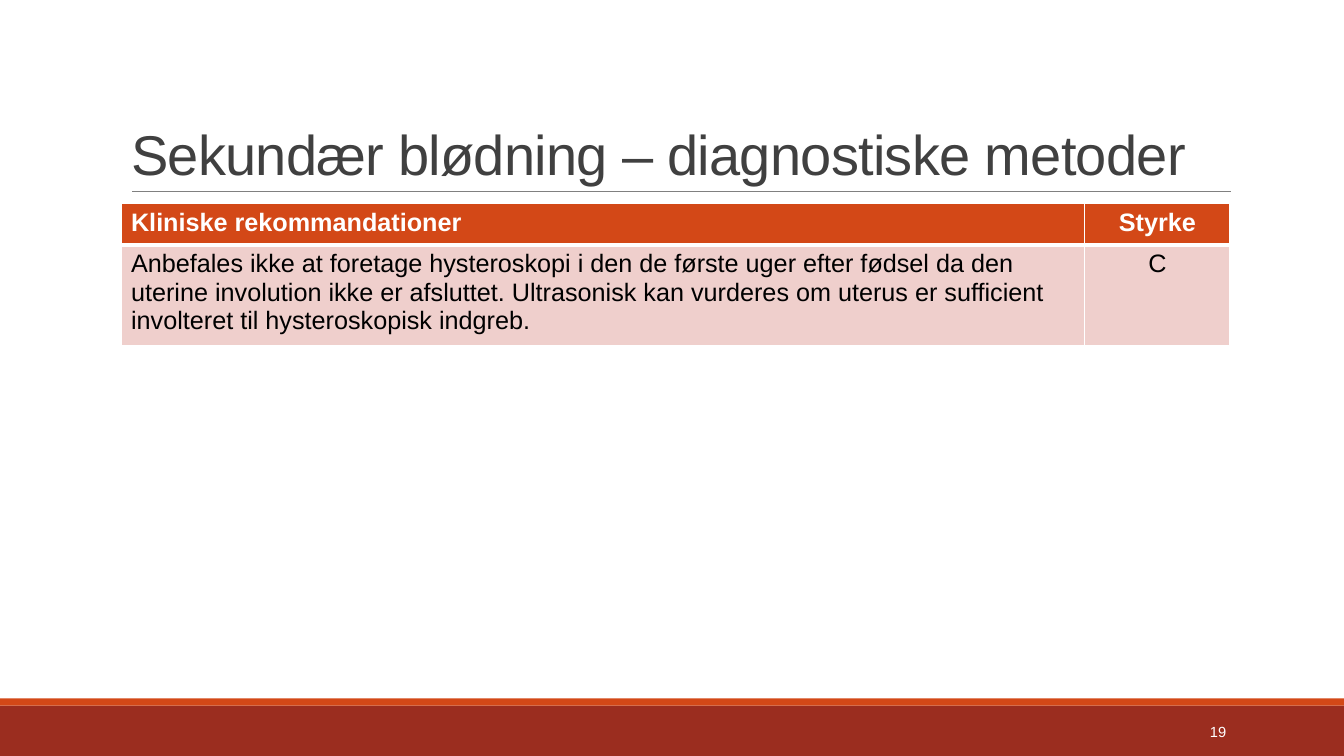
from lxml import etree
from pptx import Presentation
from pptx.dml.color import RGBColor
from pptx.enum.shapes import MSO_CONNECTOR as Connector, MSO_SHAPE as Shape
from pptx.enum.text import MSO_ANCHOR as Anchor, MSO_AUTO_SIZE as AutoSize, PP_ALIGN as Align
from pptx.oxml.ns import qn
from pptx.util import Inches, Pt

FONT = "Arial"
ORANGE, DARK_RED, PINK = "D34817", "9B2D1F", "EFCFCC"
WHITE, BLACK, GREY, CHARCOAL = "FFFFFF", "000000", "808080", "404040"

ROWS = [
    ("Kliniske rekommandationer", "Styrke"),
    ("Anbefales ikke at foretage hysteroskopi i den de første uger efter fødsel "
     "da den uterine involution ikke er afsluttet. Ultrasonisk kan vurderes om "
     "uterus er sufficient involteret til hysteroskopisk indgreb.", "C"),
]
COLUMN_WIDTHS = (9.56, 1.44)
ROW_HEIGHTS = (0.41, 0.93)


def color(value):
    return RGBColor.from_string(value)


def lengths(box):
    return [Inches(value) for value in box]


def write(frame, text, size, ink, align=Align.LEFT, bold=False):
    frame.word_wrap = True
    para = frame.paragraphs[0]
    para.text = text
    para.alignment = align
    font = para.font
    font.name, font.size, font.bold = FONT, Pt(size), bold
    font.color.rgb = color(ink)
    return para


def add_band(slide, box, fill):
    band = slide.shapes.add_shape(Shape.RECTANGLE, *lengths(box))
    band.shadow.inherit = False
    band.fill.solid()
    band.fill.fore_color.rgb = color(fill)
    band.line.fill.background()


def add_footer(slide, box, number):
    left, top, width, height = box
    stripe = 0.07
    add_band(slide, box, DARK_RED)
    add_band(slide, (left, top - stripe, width, stripe), ORANGE)
    # Page number
    number_box = (left + width - 2.5, top + 0.06, 1.43, 0.4)
    frame = slide.shapes.add_textbox(*lengths(number_box)).text_frame
    frame.vertical_anchor = Anchor.MIDDLE
    write(frame, number, 10.5, WHITE, Align.RIGHT)


def add_title(slide, box, text):
    left, top, width, height = box
    # Rule under the title
    bottom = top + height
    rule = slide.shapes.add_connector(
        Connector.STRAIGHT, *lengths((left + 0.11, bottom, left + width + 0.01, bottom)))
    rule.line.color.rgb = color(GREY)
    rule.line.width = Pt(0.5)
    etree.SubElement(rule._element.spPr, qn("a:effectLst"))
    # Title text
    title = slide.shapes.title
    title.left, title.top, title.width, title.height = lengths(box)
    frame = title.text_frame
    frame.auto_size = AutoSize.NONE
    frame.vertical_anchor = Anchor.BOTTOM
    para = write(frame, text, 40, CHARCOAL)
    para.line_spacing = 0.85
    para.runs[0].font._element.set("spc", "-50")


def set_borders(cell, bottom):
    properties = cell._tc.get_or_add_tcPr()
    widths = {"lnL": 1, "lnR": 1, "lnT": 1, "lnB": bottom}
    for position, (side, width) in enumerate(widths.items()):
        line = etree.Element(qn(f"a:{side}"), w=str(Pt(width)))
        fill = etree.SubElement(line, qn("a:solidFill"))
        etree.SubElement(fill, qn("a:srgbClr"), val=WHITE)
        properties.insert(position, line)


def add_recommendations(slide, box):
    table = slide.shapes.add_table(len(ROWS), len(COLUMN_WIDTHS), *lengths(box)).table
    for column, width in zip(table.columns, COLUMN_WIDTHS):
        column.width = Inches(width)
    for row, height, texts in zip(table.rows, ROW_HEIGHTS, ROWS):
        row.height = Inches(height)
        header = texts is ROWS[0]
        for index, (cell, text) in enumerate(zip(row.cells, texts)):
            cell.fill.solid()
            cell.fill.fore_color.rgb = color(ORANGE if header else PINK)
            write(cell.text_frame, text, 18, WHITE if header else BLACK,
                  Align.CENTER if index else Align.LEFT, header)
            set_borders(cell, 3 if header else 1)


def main():
    deck = Presentation()
    deck.slide_width, deck.slide_height = Inches(13.33), Inches(7.5)
    slide = deck.slides.add_slide(deck.slide_layouts[5])
    add_footer(slide, (0, 7, 13.33, 0.5), "19")
    add_title(slide, (1.2, 0.31, 11, 1.59), "Sekundær blødning – diagnostiske metoder")
    add_recommendations(slide, (1.2, 2.02, sum(COLUMN_WIDTHS), sum(ROW_HEIGHTS)))
    deck.save("out.pptx")


if __name__ == "__main__":
    main()
